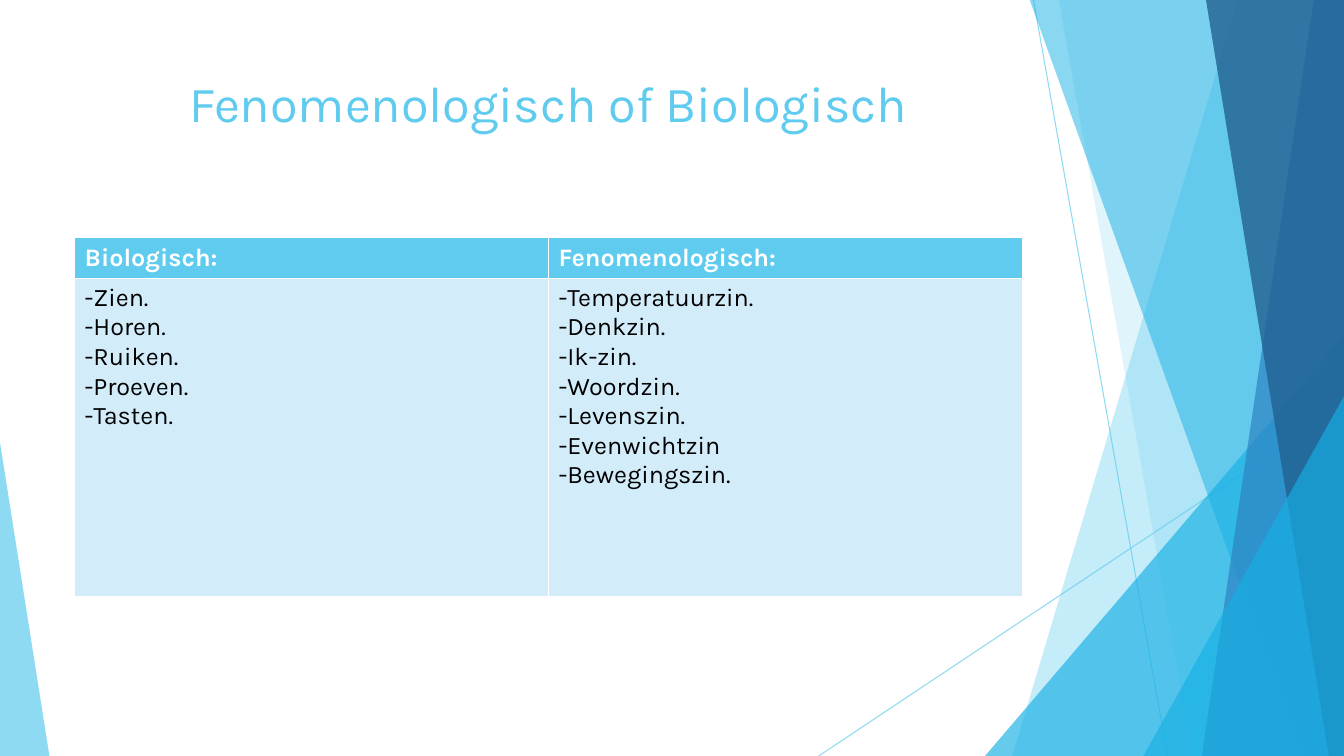
from lxml import etree
from pptx import Presentation
from pptx.dml.color import RGBColor
from pptx.enum.shapes import MSO_CONNECTOR, MSO_SHAPE
from pptx.enum.text import MSO_ANCHOR, MSO_AUTO_SIZE, PP_ALIGN
from pptx.oxml.ns import qn
from pptx.util import Pt

PX = 9144
WIDTH, HEIGHT = 1333, 750
FONT = "Karla"
SKY = RGBColor(0x5F, 0xCB, 0xEF)
CYAN = RGBColor(0x17, 0xB0, 0xE4)
BLUE = RGBColor(0x2E, 0x83, 0xC3)
NAVY = RGBColor(0x22, 0x62, 0x92)
PALE = RGBColor(0xD2, 0xEC, 0xF9)
WHITE = RGBColor(0xFF, 0xFF, 0xFF)
BLACK = RGBColor(0, 0, 0)
STRAIGHT = MSO_CONNECTOR.STRAIGHT
TRIANGLE = MSO_SHAPE.ISOSCELES_TRIANGLE
CENTER = PP_ALIGN.CENTER
TOP = MSO_ANCHOR.TOP
NO_AUTOFIT = MSO_AUTO_SIZE.NONE


def paint(fill, color, opacity):
    fill.solid()
    fill.fore_color.rgb = color
    target = fill._xPr.find(qn("a:solidFill"))[0]
    etree.SubElement(target, qn("a:alpha"), val=str(opacity * 1000))


def finish(shape, color, opacity):
    paint(shape.fill, color, opacity)
    shape.line.fill.background()
    shape.shadow.inherit = False


deck = Presentation()
deck.slide_width = WIDTH * PX
deck.slide_height = HEIGHT * PX
page = deck.slides.add_slide(deck.slide_layouts[5])
shapes = page.shapes

for ends in [(1025, 0, 1158, HEIGHT), (WIDTH, 403, 812, HEIGHT)]:
    ray = shapes.add_connector(STRAIGHT, *[end * PX for end in ends])
    ray.line.width = Pt(0.75)
    paint(ray.line.fill, SKY, 70)
    etree.SubElement(ray.element.spPr, qn("a:effectLst"))

bands = [
    (1228, 1004, SKY, 36),
    (1050, 1183, SKY, 20),
    (977, 333, 356, 1, CYAN, 66),
    (1021, 1291, CYAN, 50),
    (1303, 1192, BLUE, 70),
    (1196, 1318, NAVY, 80),
    (1134, 393, 199, 1, CYAN, 66),
    (0, 439, 49, 0, SKY, 70),
]
for *place, color, opacity in bands:
    if len(place) == 2:
        top_x, bottom_x = place
        outline = shapes.build_freeform(top_x, -1, scale=PX)
        outline.add_line_segments([(WIDTH, -1), (WIDTH, HEIGHT), (bottom_x, HEIGHT)])
        facet = outline.convert_to_shape()
    else:
        left, top, width, apex = place
        facet = shapes.add_shape(TRIANGLE, left * PX, top * PX, width * PX, (HEIGHT - top) * PX)
        facet.adjustments[0] = apex
    finish(facet, color, opacity)

title = shapes.title
shapes.element.append(title.element)
title.left, title.top, title.width, title.height = 74 * PX, 67 * PX, 940 * PX, 144 * PX
title.text = "Fenomenologisch of Biologisch"
title.text_frame.auto_size = NO_AUTOFIT
title.text_frame.vertical_anchor = TOP
para = title.text_frame.paragraphs[0]
para.alignment = CENTER
para.font.name = FONT
para.font.size = Pt(36)
para.font.color.rgb = SKY

senses = {
    "Biologisch:": ["-Zien.", "-Horen.", "-Ruiken.", "-Proeven.", "-Tasten."],
    "Fenomenologisch:": [
        "-Temperatuurzin.",
        "-Denkzin.",
        "-Ik-zin.",
        "-Woordzin.",
        "-Levenszin.",
        "-Evenwichtzin",
        "-Bewegingszin.",
    ],
}
table = shapes.add_table(2, 2, 74 * PX, 236 * PX, 940 * PX, 356 * PX).table
table.rows[0].height = 40 * PX
table.rows[1].height = 316 * PX
for column, (heading, items) in enumerate(senses.items()):
    for row, lines in enumerate([[heading], items]):
        cell = table.cell(row, column)
        cell.text = "\n".join(lines)
        cell.fill.solid()
        cell.fill.fore_color.rgb = PALE if row else SKY
        for para in cell.text_frame.paragraphs:
            para.font.name = FONT
            para.font.size = Pt(18)
            para.font.bold = row == 0
            para.font.color.rgb = BLACK if row else WHITE

deck.save("out.pptx")
